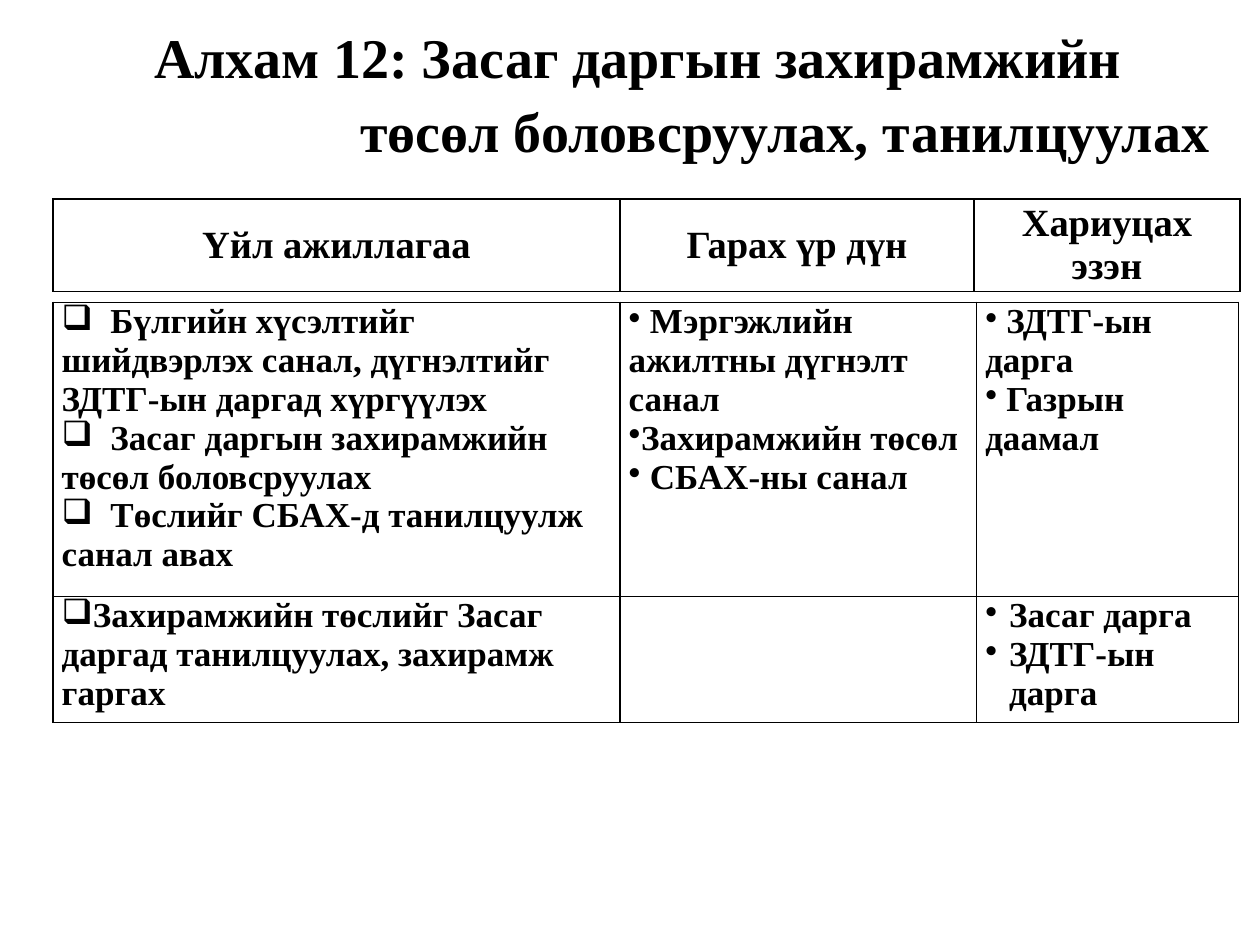
import pptx
import pptx.util
import pptx.dml.color
import pptx.enum.text
import pptx.oxml
import pptx.oxml.ns
from pptx.util import Inches

INK = "000000"
ANCHOR = pptx.enum.text.MSO_ANCHOR
CENTER = pptx.enum.text.PP_ALIGN.CENTER
NS = pptx.oxml.ns.nsdecls("a")


def style(para, size, mark=None, left=0, first=0):
    """Set font, indents and, where given, the bullet mark."""
    para.font.name = "Times New Roman"
    para.font.size = pptx.util.Pt(size)
    para.font.bold = True
    para.font.color.rgb = pptx.dml.color.RGBColor.from_string(INK)
    props = para._p.get_or_add_pPr()
    props.set("marL", str(Inches(left)))
    props.set("indent", str(Inches(first)))
    if mark:
        bullet = pptx.oxml.parse_xml(f'<a:buChar {NS} char="{mark}"/>')
        props.insert_element_before(bullet, "a:tabLst", "a:defRPr", "a:extLst")


def grid(top, cols, rows):
    """Add a table with thin black borders and no fill."""
    frame = slide.shapes.add_table(
        len(rows), len(cols), Inches(0.42), Inches(top),
        Inches(sum(cols)), Inches(sum(rows)))
    table = frame.table
    table.first_row = table.horz_banding = False
    for col, width in zip(table.columns, cols):
        col.width = Inches(width)
    for row, height in zip(table.rows, rows):
        row.height = Inches(height)
    for cell in table.iter_cells():
        cell.margin_left = cell.margin_right = Inches(0.07)
        cell.margin_top = cell.margin_bottom = 0
        props = cell._tc.get_or_add_tcPr()
        for side in ("lnL", "lnR", "lnT", "lnB"):
            props.append(pptx.oxml.parse_xml(
                f'<a:{side} {NS} w="12700"><a:solidFill>'
                f'<a:srgbClr val="{INK}"/></a:solidFill></a:{side}>'))
        cell.fill.background()
    return table


deck = pptx.Presentation()
deck.slide_width = Inches(10)
deck.slide_height = Inches(7.5)
slide = deck.slides.add_slide(deck.slide_layouts[6])

# Title
box = slide.shapes.add_textbox(
    Inches(0.58), Inches(0.25), Inches(9.19), Inches(0.92))
frame = box.text_frame
frame.word_wrap = True
frame.vertical_anchor = ANCHOR.MIDDLE
title = frame.paragraphs[0]
title.text = "Алхам 12: Засаг даргын захирамжийн  \v төсөл боловсруулах, танилцуулах"
title.alignment = CENTER
title.line_spacing = 1.1
style(title, 32, left=2, first=-2)

# Column headings
heads = ["Үйл ажиллагаа", "Гарах үр дүн", "Хариуцах эзэн"]
table = grid(1.58, [4.5, 2.81, 2.11], [0.68])
for cell, text in zip(table.iter_cells(), heads):
    cell.text = text
    cell.vertical_anchor = ANCHOR.MIDDLE
    para = cell.text_frame.paragraphs[0]
    para.alignment = CENTER
    style(para, 22)

# Steps: bullet mark, hanging indent and lines of each cell
steps = [
    ("❑", 0, ["  Бүлгийн хүсэлтийг шийдвэрлэх санал, дүгнэлтийг ЗДТГ-ын даргад хүргүүлэх",
              "  Засаг даргын захирамжийн төсөл боловсруулах",
              "  Төслийг СБАХ-д танилцуулж санал авах"]),
    ("•", 0, [" Мэргэжлийн ажилтны дүгнэлт санал",
              "Захирамжийн төсөл",
              " СБАХ-ны санал"]),
    ("•", 0, [" ЗДТГ-ын дарга", " Газрын даамал"]),
    ("❑", 0, ["Захирамжийн төслийг Засаг даргад танилцуулах, захирамж гаргах"]),
    (None, 0, []),
    ("•", 0.19, ["Засаг дарга", "ЗДТГ-ын дарга"]),
]
table = grid(2.4, [4.5, 2.83, 2.08], [2.16, 0.92])
for cell, (mark, hang, lines) in zip(table.iter_cells(), steps):
    cell.text = "\n".join(lines)
    for para in cell.text_frame.paragraphs:
        style(para, 20, mark, hang, -hang)

deck.save("out.pptx")
